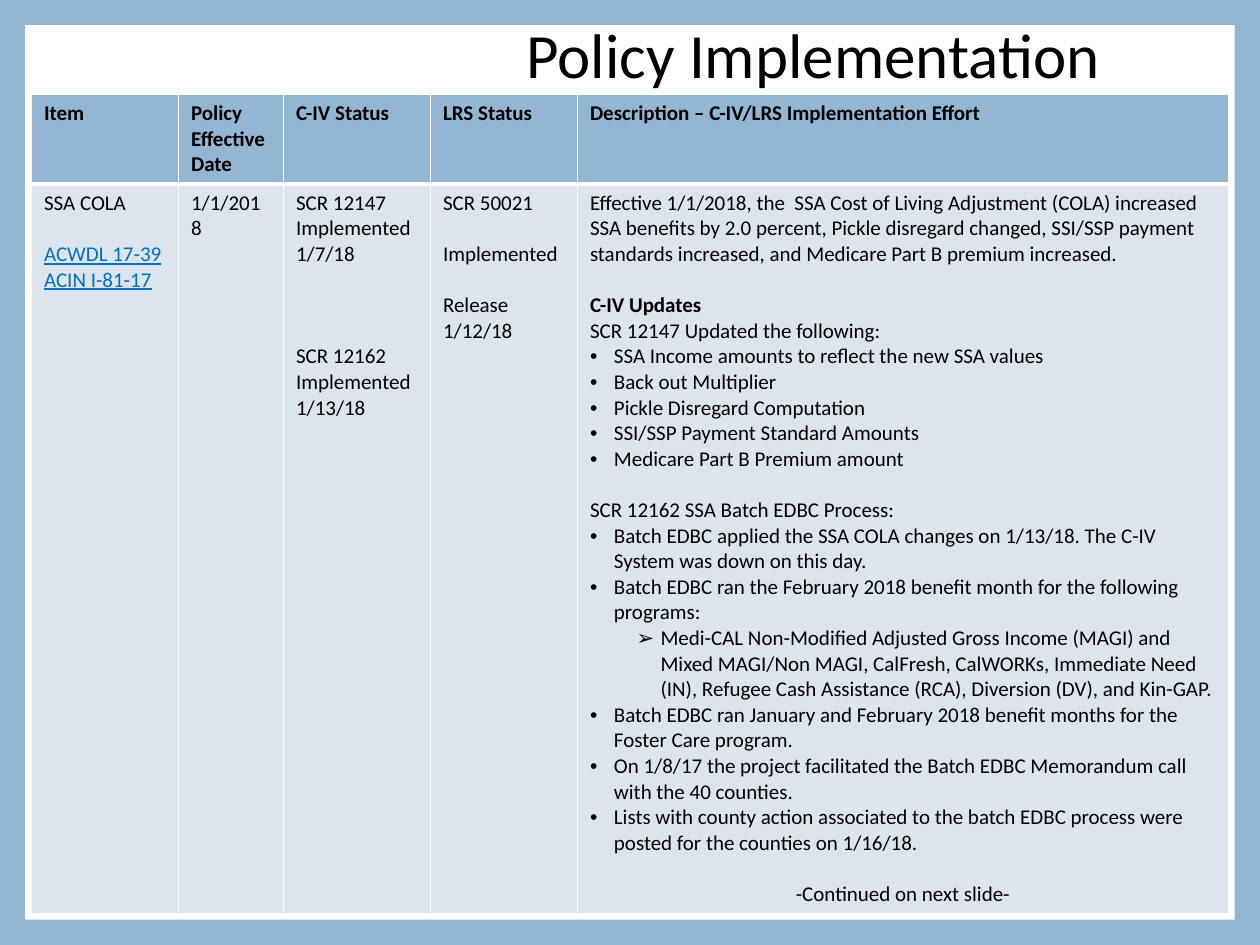
from lxml import etree
from pptx import Presentation
from pptx.dml.color import RGBColor
from pptx.enum.shapes import MSO_SHAPE
from pptx.enum.text import MSO_ANCHOR, MSO_AUTO_SIZE, PP_ALIGN
from pptx.oxml.ns import qn
from pptx.util import Emu, Inches, Pt

RECTANGLE = MSO_SHAPE.RECTANGLE
MIDDLE = MSO_ANCHOR.MIDDLE
NO_AUTOFIT = MSO_AUTO_SIZE.NONE
RIGHT, CENTER = PP_ALIGN.RIGHT, PP_ALIGN.CENTER

COLORS = {"blue": "94B6D2", "pale": "DCE5EE", "white": "FFFFFF",
          "black": "000000", "link": "0070C0"}

# Bullet kinds: character, left indent in inches, level
BULLETS = {"bullet": ("•", 0.19, 0), "arrow": ("➢", 0.56, 1)}
HANGING = 0.19
LINE_HEIGHT = 14.65  # points taken by one line of 12 point text

# Column widths in sixtieths of the slide's width
COLUMNS = [7, 5, 7, 7, 31]
HEADERS = ["Item", "Policy Effective Date", "C-IV Status", "LRS Status",
           "Description – C-IV/LRS Implementation Effort"]

# Each paragraph: text, kind, lines of space before
BODY = [
    [("SSA COLA", "plain", 0), ("ACWDL 17-39", "link", 1),
     ("ACIN I-81-17", "link", 0)],
    [("1/1/2018", "plain", 0)],
    [("SCR 12147", "plain", 0), ("Implemented 1/7/18", "plain", 0),
     ("SCR 12162", "plain", 3), ("Implemented", "plain", 0),
     ("1/13/18", "plain", 0)],
    [("SCR 50021", "plain", 0), ("Implemented", "plain", 1),
     ("Release", "plain", 1), ("1/12/18", "plain", 0)],
    [("Effective 1/1/2018, the  SSA Cost of Living Adjustment (COLA) increased "
      "SSA benefits by 2.0 percent, Pickle disregard changed, SSI/SSP payment "
      "standards increased, and Medicare Part B premium increased.", "plain", 0),
     ("C-IV Updates", "bold", 1),
     ("SCR 12147 Updated the following:", "plain", 0),
     ("SSA Income amounts to reflect the new SSA values", "bullet", 0),
     ("Back out Multiplier", "bullet", 0),
     ("Pickle Disregard Computation", "bullet", 0),
     ("SSI/SSP Payment Standard Amounts", "bullet", 0),
     ("Medicare Part B Premium amount", "bullet", 0),
     ("SCR 12162 SSA Batch EDBC Process:", "plain", 1),
     ("Batch EDBC applied the SSA COLA changes on 1/13/18. The C-IV System "
      "was down on this day.", "bullet", 0),
     ("Batch EDBC ran the February 2018 benefit month for the following "
      "programs:", "bullet", 0),
     ("Medi-CAL Non-Modified Adjusted Gross Income (MAGI) and Mixed MAGI/Non "
      "MAGI, CalFresh, CalWORKs, Immediate Need (IN), Refugee Cash Assistance "
      "(RCA), Diversion (DV), and Kin-GAP.", "arrow", 0),
     ("Batch EDBC ran January and February 2018 benefit months for the Foster "
      "Care program.", "bullet", 0),
     ("On 1/8/17 the project facilitated the Batch EDBC Memorandum call with "
      "the 40 counties.", "bullet", 0),
     ("Lists with county action associated to the batch EDBC process were "
      "posted for the counties on 1/16/18.", "bullet", 0),
     ("-Continued on next slide-", "center", 1)],
]


class SlideBuilder:
    font = "Calibri"

    def __init__(self, presentation):
        self.width = presentation.slide_width
        self.height = presentation.slide_height
        self.slide = presentation.slides.add_slide(presentation.slide_layouts[5])

    def box(self, left, top, width, height):
        """Turn shares of the slide's size into lengths."""
        return (Emu(round(left * self.width)), Emu(round(top * self.height)),
                Emu(round(width * self.width)), Emu(round(height * self.height)))

    def paint(self, fill, color):
        fill.solid()
        fill.fore_color.rgb = RGBColor.from_string(COLORS[color])

    def format_text(self, paragraph, size, color="black", bold=False, underline=False):
        for run in paragraph.runs:
            run.font.name = self.font
            run.font.size = Pt(size)
            run.font.bold = bold
            run.font.underline = underline
            run.font.color.rgb = RGBColor.from_string(COLORS[color])

    def background(self, color):
        self.paint(self.slide.background.fill, color)

    def panel(self, area, color):
        shape = self.slide.shapes.add_shape(RECTANGLE, *self.box(*area))
        shape.shadow.inherit = False
        self.paint(shape.fill, color)
        shape.line.fill.background()
        self.slide.shapes._spTree.insert(2, shape._element)  # behind the title

    def title(self, area, text):
        title = self.slide.shapes.title
        title.left, title.top, title.width, title.height = self.box(*area)
        frame = title.text_frame
        frame.text = text
        frame.auto_size = NO_AUTOFIT
        frame.vertical_anchor = MIDDLE
        paragraph = frame.paragraphs[0]
        paragraph.alignment = RIGHT
        paragraph.line_spacing = 0.9
        self.format_text(paragraph, 36)

    def borders(self, cell, **widths):
        properties = cell._tc.get_or_add_tcPr()
        for side in "LRTB":
            line = etree.SubElement(properties, qn(f"a:ln{side}"),
                                    w=str(Pt(widths.get(side, 1))))
            fill = etree.SubElement(line, qn("a:solidFill"))
            etree.SubElement(fill, qn("a:srgbClr"), val=COLORS["white"])

    def bullet(self, paragraph, character, indent, level):
        paragraph.level = level
        properties = paragraph._p.get_or_add_pPr()
        properties.set("marL", str(Inches(indent)))
        properties.set("indent", str(-Inches(HANGING)))
        etree.SubElement(properties, qn("a:buFont"), typeface="Arial")
        etree.SubElement(properties, qn("a:buChar"), char=character)

    def fill_cell(self, cell, lines):
        frame = cell.text_frame
        frame.text = "\n".join(text for text, _, _ in lines)
        for paragraph, (_, kind, gap) in zip(frame.paragraphs, lines):
            if gap:
                paragraph.space_before = Pt(gap * LINE_HEIGHT)
            if kind in BULLETS:
                self.bullet(paragraph, *BULLETS[kind])
            if kind == "center":
                paragraph.alignment = CENTER
            is_link = kind == "link"
            self.format_text(paragraph, 12, "link" if is_link else "black",
                             kind == "bold", is_link)

    def table(self, left, top, columns, row_shares, headers, body):
        area = self.box(left, top, sum(columns) / 60, sum(row_shares))
        table = self.slide.shapes.add_table(2, len(columns), *area).table
        table.horz_banding = False
        for row, share in zip(table.rows, row_shares):
            row.height = Emu(round(share * self.height))
        for index, units in enumerate(columns):
            table.columns[index].width = Emu(round(self.width * units / 60))
            header, content = table.cell(0, index), table.cell(1, index)
            self.borders(header, B=3)
            self.borders(content, T=3)
            self.paint(header.fill, "blue")
            self.paint(content.fill, "pale")
            self.fill_cell(header, [(headers[index], "bold", 0)])
            self.fill_cell(content, body[index])


def main():
    presentation = Presentation()
    presentation.slide_width, presentation.slide_height = Inches(10), Inches(7.5)
    builder = SlideBuilder(presentation)

    # Blue frame around a white page
    builder.background("blue")
    builder.panel((0.02, 0.2 / 7.5, 0.96, 7.1 / 7.5), "white")

    # Title
    builder.title((0.05, 0.17 / 7.5, 0.833, 0.58 / 7.5), "Policy Implementation")

    # Policy table
    builder.table(0.025, 0.1, COLUMNS, (0.7 / 7.5, 5.75 / 7.5), HEADERS, BODY)

    presentation.save("out.pptx")


if __name__ == "__main__":
    main()
